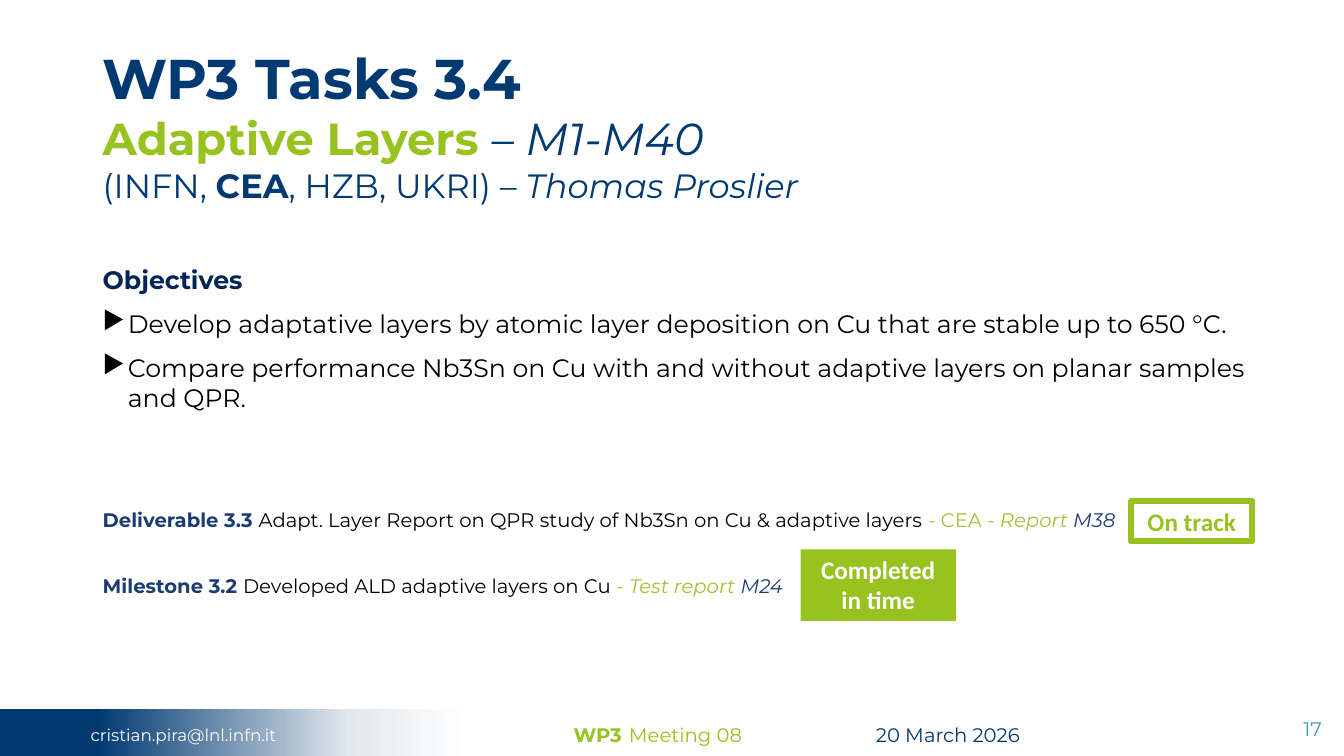
from lxml import etree
from pptx import Presentation
from pptx.dml.color import RGBColor
from pptx.enum.shapes import MSO_SHAPE
from pptx.enum.text import MSO_ANCHOR, PP_ALIGN
from pptx.oxml.ns import qn
from pptx.util import Inches, Pt

RECT = MSO_SHAPE.RECTANGLE
TOP, MID = MSO_ANCHOR.TOP, MSO_ANCHOR.MIDDLE
LEFT, MIDDLE, RIGHT = PP_ALIGN.LEFT, PP_ALIGN.CENTER, PP_ALIGN.RIGHT

NAVY = RGBColor(0x01, 0x3A, 0x72)
DEEP = RGBColor(0x01, 0x25, 0x56)
BLUE = RGBColor(0x1B, 0x3C, 0x70)
LIME = RGBColor(0x98, 0xC2, 0x1F)
MOSS = RGBColor(0xA4, 0xC1, 0x37)
TEAL = RGBColor(0x43, 0x99, 0xB6)
MIST = RGBColor(0xE2, 0xE8, 0xEE)
BLACK = RGBColor(0, 0, 0)
WHITE = RGBColor(255, 255, 255)

WIDE, HIGH = 13.33, 7.5
EDGE = 0.92
FADE = [(0, NAVY), (21, NAVY), (75, MIST), (100, WHITE)]

TITLE = [
    [("WP3 Tasks 3.4", 40, NAVY, "b")],
    [("Adaptive Layers ", 32, LIME, "b"), ("– ", 32, NAVY, ""),
     ("M1-M40", 32, NAVY, "i")],
    [("(INFN, ", 24, NAVY, ""), ("CEA", 24, NAVY, "b"),
     (", HZB, UKRI) ", 24, NAVY, ""), ("– Thomas Proslier", 24, NAVY, "i")],
]
HEAD = "Objectives"
GOALS = [
    "Develop adaptative layers by atomic layer deposition on Cu that are stable up to 650 °C.",
    "Compare performance Nb3Sn on Cu with and without adaptive layers on planar samples and QPR.",
]
DUES = [
    (4.99, [("Deliverable 3.3 ", 14, BLUE, "b"),
            ("Adapt. Layer Report on QPR study of Nb3Sn on Cu & adaptive layers ", 14, BLACK, ""),
            ("- CEA", 14, MOSS, ""), (" - Report ", 14, MOSS, "i"),
            ("M38", 14, BLUE, "i")]),
    (5.64, [("Milestone 3.2 ", 14, BLUE, "b"),
            ("Developed ALD adaptive layers on Cu ", 14, BLACK, ""),
            ("- ", 14, MOSS, ""), ("Test report ", 14, MOSS, "i"),
            ("M24", 14, BLUE, "i")]),
]
TAGS = [
    ("Completed in time", (7.94, 5.45, 1.54, 0.71), LIME, WHITE),
    ("On track", (11.22, 4.97, 1.2, 0.4), None, LIME),
]
MEET = [("WP3", 14, LIME, "b"), ("\tMeeting 08", 14, LIME, ""),
        ("\t20 March 2026", 14, NAVY, "")]
STOPS = [0.55, 3]
MAIL = "cristian.pira@lnl.infn.it"
PAGE = "17"

deck = Presentation()
deck.slide_width, deck.slide_height = Inches(WIDE), Inches(HIGH)
slide = deck.slides.add_slide(deck.slide_layouts[6])


def add_runs(para, runs, face="Montserrat"):
    for text, size, tint, style in runs:
        run = para.add_run()
        run.text = text
        font = run.font
        font.name, font.size = face, Pt(size)
        font.bold, font.italic = "b" in style, "i" in style
        font.color.rgb = tint


def add_box(place, anchor=TOP):
    box = slide.shapes.add_textbox(*map(Inches, place))
    frame = box.text_frame
    frame.word_wrap = True
    frame.vertical_anchor = anchor
    return frame


def add_line(place, runs, anchor=TOP, align=LEFT):
    para = add_box(place, anchor).paragraphs[0]
    para.alignment = align
    add_runs(para, runs)
    return para


def add_rect(place):
    rect = slide.shapes.add_shape(RECT, *map(Inches, place))
    rect.shadow.inherit = False
    rect.line.fill.background()
    return rect


def add_fade(place):
    rect = add_rect(place)
    rect.fill.gradient()
    rect.fill.gradient_angle = 0
    stops = rect.fill._fill._gradFill.find(qn("a:gsLst"))
    for old in list(stops):
        stops.remove(old)
    for share, tint in FADE:
        stop = etree.SubElement(stops, qn("a:gs"), pos=str(share * 1000))
        etree.SubElement(stop, qn("a:srgbClr"), val=str(tint))


def add_tag(text, place, fill, tint):
    rect = add_rect(place)
    if fill is None:
        rect.fill.background()
        rect.line.color.rgb = tint
        rect.line.width = Pt(4.5)
    else:
        rect.fill.solid()
        rect.fill.fore_color.rgb = fill
    frame = rect.text_frame
    frame.word_wrap = True
    frame.vertical_anchor = TOP
    para = frame.paragraphs[0]
    para.alignment = MIDDLE
    add_runs(para, [(text, 18, tint, "b")], "Calibri")


def add_goals():
    frame = add_box((EDGE, 2.57, 11.74, 2))
    add_runs(frame.paragraphs[0], [(HEAD, 18, DEEP, "b")])
    for goal in GOALS:
        para = frame.add_paragraph()
        props = para._p.get_or_add_pPr()
        props.set("marL", str(Inches(0.25)))
        props.set("indent", str(-Inches(0.25)))
        etree.SubElement(props, qn("a:buChar"), char="▶")
        para.space_before = Pt(10)
        add_runs(para, [(goal, 18, BLACK, "")])


def add_title():
    para = add_box((EDGE, 0.24, 11.5, 1.99), MID).paragraphs[0]
    for row, runs in enumerate(TITLE):
        if row:
            para.add_line_break()
        add_runs(para, runs)


def add_foot():
    add_fade((0, 7.03, 4.62, HIGH - 7.03))
    meet = add_line((5.59, 7.12, 5.5, 0.34), MEET)
    tabs = etree.SubElement(meet._p.get_or_add_pPr(), qn("a:tabLst"))
    for stop in STOPS:
        etree.SubElement(tabs, qn("a:tab"), pos=str(Inches(stop)), algn="l")
    add_line((0.8, 7.06, 3, 0.46), [(MAIL, 12, WHITE, "")], MID)
    add_line((10.21, 7.03, 3, 0.4), [(PAGE, 14, TEAL, "")], MID, RIGHT)


add_foot()
add_goals()
add_title()
for top, runs in DUES:
    add_line((EDGE, top, WIDE - 2 * EDGE, 0.34), runs)
for tag in TAGS:
    add_tag(*tag)
deck.save("out.pptx")
